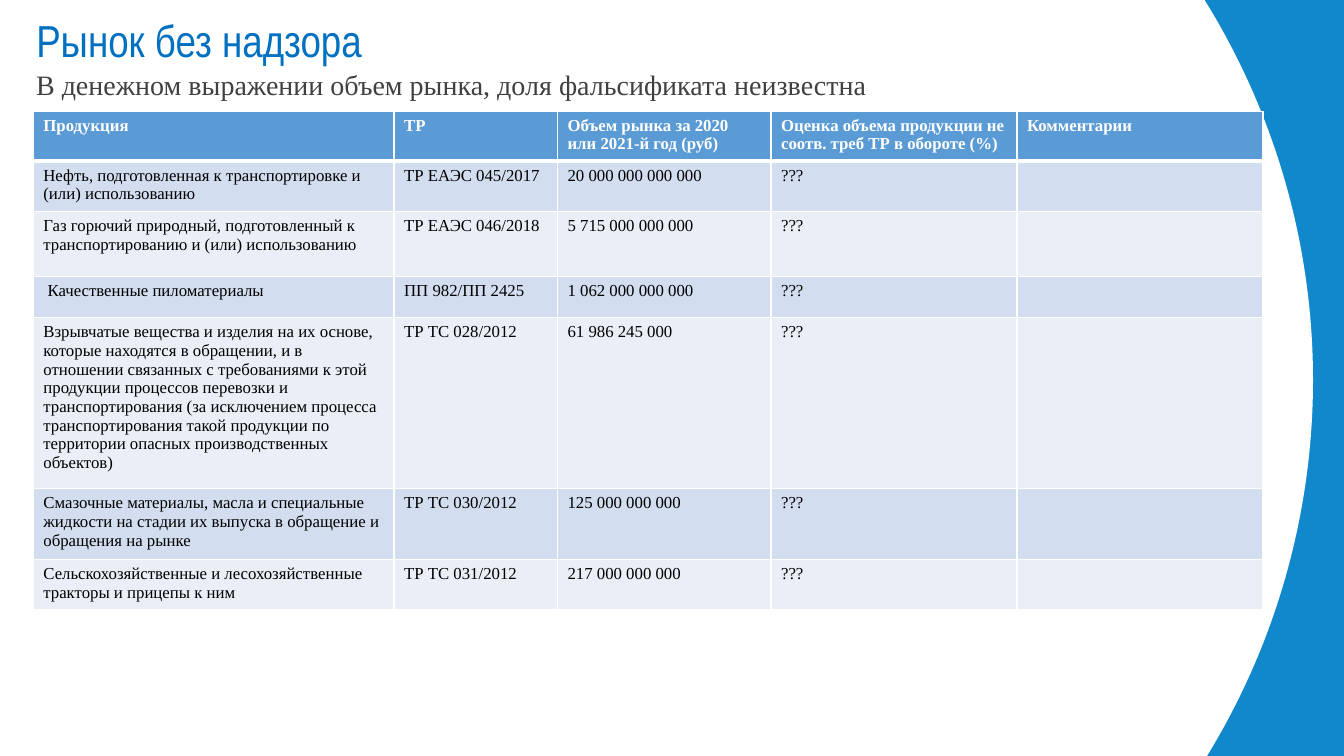
import pptx
import pptx.dml.color
import pptx.enum.shapes
import pptx.enum.text
import pptx.util
from lxml import etree
from pptx.util import Cm, Pt

HUES = {
    "back": "1188CC", "white": "FFFFFF", "title": "0070C0", "sub": "404040",
    "head": "5B9BD5", "odd": "D2DEEF", "even": "EAEFF7", "text": "000000",
}
SERIF = "Times New Roman"
DRAW = "http://schemas.openxmlformats.org/drawingml/2006/main"
WIDTHS = [9.09, 4.12, 5.38, 6.2, 6.2]
HEIGHTS = [1.26, 1.27, 1.63, 1.05, 4.31, 1.78, 1.27]
HEADS = ["Продукция", "ТР", "Объем рынка за 2020 или 2021-й год (руб)",
         "Оценка объема продукции не соотв. треб ТР в обороте (%)", "Комментарии"]
GOODS = [
    ("Нефть, подготовленная к транспортировке и (или) использованию",
     "ТР ЕАЭС 045/2017", "20 000 000 000 000"),
    ("Газ горючий природный, подготовленный к транспортированию и (или) "
     "использованию", "ТР ЕАЭС 046/2018", "5 715 000 000 000"),
    (" Качественные пиломатериалы", "ПП 982/ПП 2425", "1 062 000 000 000"),
    ("Взрывчатые вещества и изделия на их основе, которые находятся в "
     "обращении, и в отношении связанных с требованиями к этой продукции "
     "процессов перевозки и транспортирования (за исключением процесса "
     "транспортирования такой продукции по территории опасных "
     "производственных объектов)", "ТР ТС 028/2012", "61 986 245 000"),
    ("Смазочные материалы, масла и специальные жидкости на стадии их выпуска "
     "в обращение и обращения на рынке", "ТР ТС 030/2012", "125 000 000 000"),
    ("Сельскохозяйственные и лесохозяйственные тракторы и прицепы к ним",
     "ТР ТС 031/2012", "217 000 000 000"),
]


def color(name):
    return pptx.dml.color.RGBColor.from_string(HUES[name])


def paint(fill, name):
    fill.solid()
    fill.fore_color.rgb = color(name)


def write(frame, text, size, face, hue, bold=False):
    frame.text = text
    for run in frame.paragraphs[0].runs:
        run.font.size = Pt(size)
        run.font.name = face
        run.font.bold = bold
        run.font.color.rgb = color(hue)


def place(shape, left, top, width, height):
    shape.left, shape.top = Cm(left), Cm(top)
    shape.width, shape.height = Cm(width), Cm(height)


def label(shape, box, text, size, face, hue):
    place(shape, *box)
    frame = shape.text_frame
    frame.word_wrap = True
    frame.auto_size = pptx.enum.text.MSO_AUTO_SIZE.NONE
    frame.vertical_anchor = pptx.enum.text.MSO_ANCHOR.TOP
    write(frame, text, size, face, hue)
    frame.paragraphs[0].alignment = pptx.enum.text.PP_ALIGN.LEFT


def add_disc(slide):
    kind = pptx.enum.shapes.MSO_SHAPE.OVAL
    disc = slide.shapes.add_shape(kind, Cm(-3.18), Cm(-8.56), Cm(36.27), Cm(36.27))
    disc.shadow.inherit = False
    paint(disc.fill, "white")
    disc.line.fill.background()
    # Send the disc behind the title
    slide.shapes.title.element.addprevious(disc.element)


def edge(cell, side, width):
    props = cell._tc.get_or_add_tcPr()
    line = etree.SubElement(props, f"{{{DRAW}}}ln{side}", w=str(Pt(width)))
    fill = etree.SubElement(line, f"{{{DRAW}}}solidFill")
    etree.SubElement(fill, f"{{{DRAW}}}srgbClr", val=HUES["white"])


def add_grid(slide):
    rows = [HEADS] + [[*good, "???", ""] for good in GOODS]
    frame = slide.shapes.add_table(len(rows), len(HEADS), Cm(0.84), Cm(2.8),
                                   Cm(sum(WIDTHS)), Cm(sum(HEIGHTS)))
    table = frame.table
    for col, width in zip(table.columns, WIDTHS):
        col.width = Cm(width)
    for row, height in zip(table.rows, HEIGHTS):
        row.height = Cm(height)
    for i, row in enumerate(rows):
        head = i == 0
        back = "head" if head else ("even", "odd")[i % 2]
        for j, text in enumerate(row):
            cell = table.cell(i, j)
            write(cell.text_frame, text, 12, SERIF, "white" if head else "text", head)
            for side in "LRTB":
                thick = (head and side == "B") or (i == 1 and side == "T")
                edge(cell, side, 3 if thick else 1)
            paint(cell.fill, back)


def main():
    deck = pptx.Presentation()
    deck.slide_width, deck.slide_height = Cm(33.87), Cm(19.05)
    slide = deck.slides.add_slide(deck.slide_layouts[5])

    # Backdrop
    paint(slide.background.fill, "back")
    add_disc(slide)

    # Headings
    label(slide.shapes.title, (0.66, 0.2, 29.18, 1.63),
          "Рынок без надзора", 32, "Arial Narrow", "title")
    sub = slide.shapes.add_textbox(0, 0, 0, 0)
    label(sub, (0.66, 1.57, 29.18, 1.2),
          "В денежном выражении объем рынка, доля фальсификата неизвестна",
          20, SERIF, "sub")

    # Market table
    add_grid(slide)
    deck.save("out.pptx")


if __name__ == "__main__":
    main()
